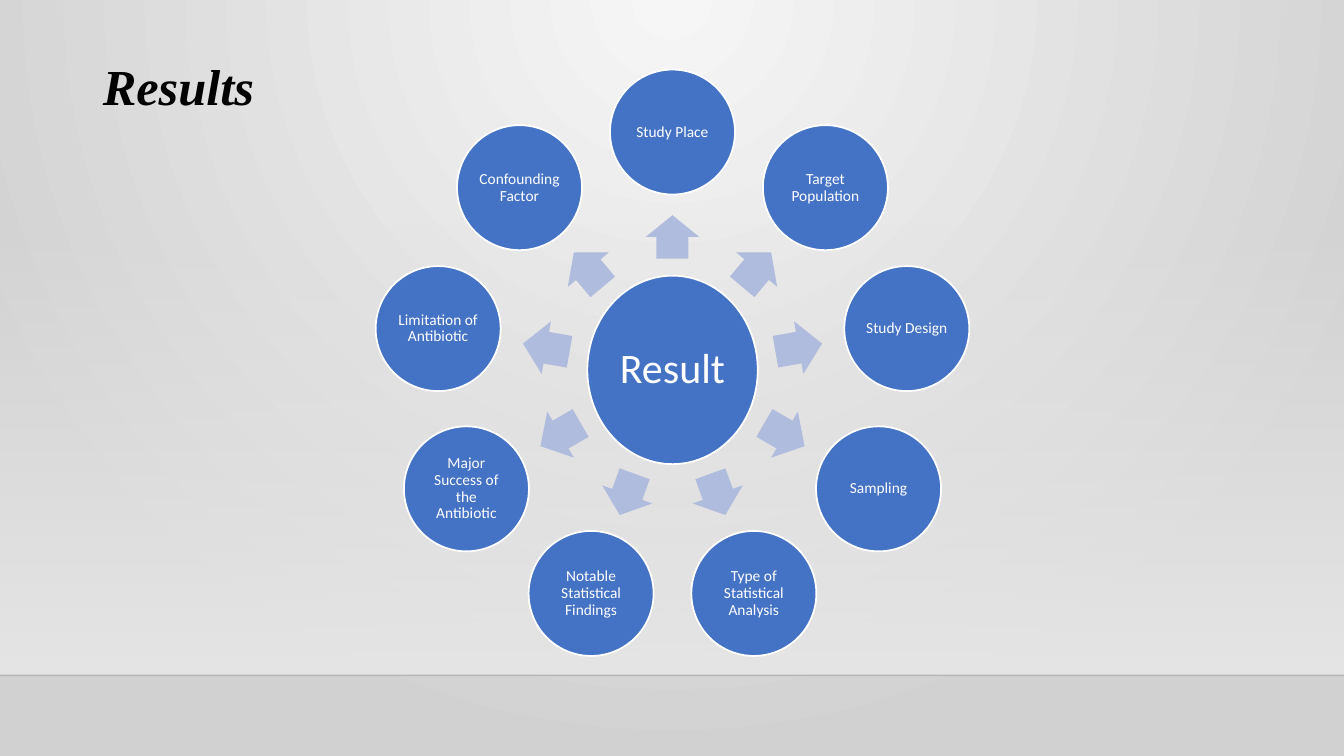
from math import cos, radians, sin

from pptx import Presentation
from pptx.dml.color import RGBColor
from pptx.enum.shapes import MSO_CONNECTOR as Link, MSO_SHAPE as Kind
from pptx.enum.text import MSO_ANCHOR as Anchor, PP_ALIGN as Align
from pptx.oxml import parse_xml
from pptx.oxml.ns import nsdecls, qn
from pptx.util import Inches, Pt

WIDE, HIGH = 13.33, 7.5
TOPICS = [
    "Study Place", "Target Population", "Study Design", "Sampling",
    "Type of Statistical Analysis", "Notable Statistical Findings",
    "Major Success of the Antibiotic", "Limitation of Antibiotic",
    "Confounding Factor",
]
LABEL = {"name": "Calibri", "size": Pt(11)}
HUB = {"name": "Calibri", "size": Pt(30)}
TITLE = {"name": "Times New Roman", "size": Pt(36), "bold": True, "italic": True}


def color(code):
    return RGBColor.from_string(code)


def blend(fill, node, stops, way):
    """Give a fill a gradient of (position, colour, opacity) stops."""
    fill.background()
    marks = "".join(
        f'<a:gs pos="{pos * 1000}"><a:srgbClr val="{code}">'
        f'<a:alpha val="{solid * 1000}"/></a:srgbClr></a:gs>'
        for pos, code, solid in stops)
    old = node.find(".//" + qn("a:noFill"))
    old.getparent().replace(old, parse_xml(
        f'<a:gradFill {nsdecls("a")} rotWithShape="1">'
        f'<a:gsLst>{marks}</a:gsLst>{way}</a:gradFill>'))


def shape(slide, kind, mid_x, mid_y, wide, high, code=None):
    """Add a shape around its centre."""
    item = slide.shapes.add_shape(
        kind, Inches(mid_x - wide / 2), Inches(mid_y - high / 2),
        Inches(wide), Inches(high))
    item.shadow.inherit = False
    item.line.fill.background()
    if code:
        item.fill.solid()
        item.fill.fore_color.rgb = color(code)
    return item


def write(frame, text, look, code, inset=None):
    frame.word_wrap = True
    frame.vertical_anchor = Anchor.MIDDLE
    if inset is not None:
        for side in ("left", "right", "top", "bottom"):
            setattr(frame, "margin_" + side, Inches(inset))
    para = frame.paragraphs[0]
    para.alignment = Align.CENTER
    run = para.add_run()
    run.text = text
    for key, value in look.items():
        setattr(run.font, key, value)
    run.font.color.rgb = color(code)
    return para


def disc(slide, mid_x, mid_y, wide, high, text, look, inset):
    item = shape(slide, Kind.OVAL, mid_x, mid_y, wide, high, "4472C4")
    item.line.color.rgb = color("FFFFFF")
    item.line.width = Pt(1.25)
    para = write(item.text_frame, text, look, "FFFFFF", inset)
    para.line_spacing = 0.9


def stage(slide, top, floor):
    # Backdrop with light from above
    back = slide.background
    blend(back.fill, slide.element,
          [(0, "F6F6F6", 100), (100, "D2D1D1", 100)],
          '<a:path path="circle"><a:fillToRect l="43000" t="0" '
          'r="43000" b="100000"/></a:path>')
    # Wall fading in towards the floor
    wall = shape(slide, Kind.RECTANGLE, WIDE / 2, (top + floor) / 2,
                 WIDE, floor - top, "E7E6E6")
    blend(wall.fill, wall.element,
          [(0, "E7E6E6", 0), (100, "E7E6E6", 100)],
          '<a:lin ang="5400000" scaled="0"/>')
    # Floor edge
    edge = slide.shapes.add_connector(
        Link.STRAIGHT, 0, Inches(floor), Inches(WIDE), Inches(floor))
    edge.line.width = Pt(1)
    edge.line.color.rgb = color("000001")
    tint = edge.element.find(".//" + qn("a:srgbClr"))
    tint.append(parse_xml(f'<a:alpha {nsdecls("a")} val="20000"/>'))
    edge.element.spPr.append(parse_xml(f'<a:effectLst {nsdecls("a")}/>'))


def wheel(slide, mid_x, mid_y, reach):
    # Hub
    disc(slide, mid_x, mid_y, 1.69, 1.87, "Result", HUB, 0.04)
    # Arrows and topics, clockwise from the top
    step = 360 / len(TOPICS)
    for i, topic in enumerate(TOPICS):
        turn = i * step - 90
        dx, dy = cos(radians(turn)), sin(radians(turn))
        # The oval hub leaves less room above and below than at the sides
        far, size = 1.27 + 0.05 * dy ** 2, 0.47 - 0.04 * dy ** 2
        arrow = shape(slide, Kind.RIGHT_ARROW, mid_x + far * dx,
                      mid_y + far * dy, size, 0.53, "B0BCDE")
        arrow.rotation = turn % 360
        arrow.adjustments[0] = 0.6
        arrow.adjustments[1] = 0.5
        disc(slide, mid_x + reach * dx, mid_y + reach * dy,
             1.24, 1.24, topic, LABEL, 0.02)


def heading(slide, left, top, wide, high):
    box = slide.shapes.add_textbox(*map(Inches, (left, top, wide, high)))
    write(box.text_frame, "Results", TITLE, "000000")


def main():
    deck = Presentation()
    deck.slide_width, deck.slide_height = Inches(WIDE), Inches(HIGH)
    slide = deck.slides.add_slide(deck.slide_layouts[6])
    stage(slide, 2.21, 6.7)
    wheel(slide, 6.67, 3.67, 2.36)
    heading(slide, 0.63, 0.32, 2.28, 1.05)
    deck.save("out.pptx")


if __name__ == "__main__":
    main()
